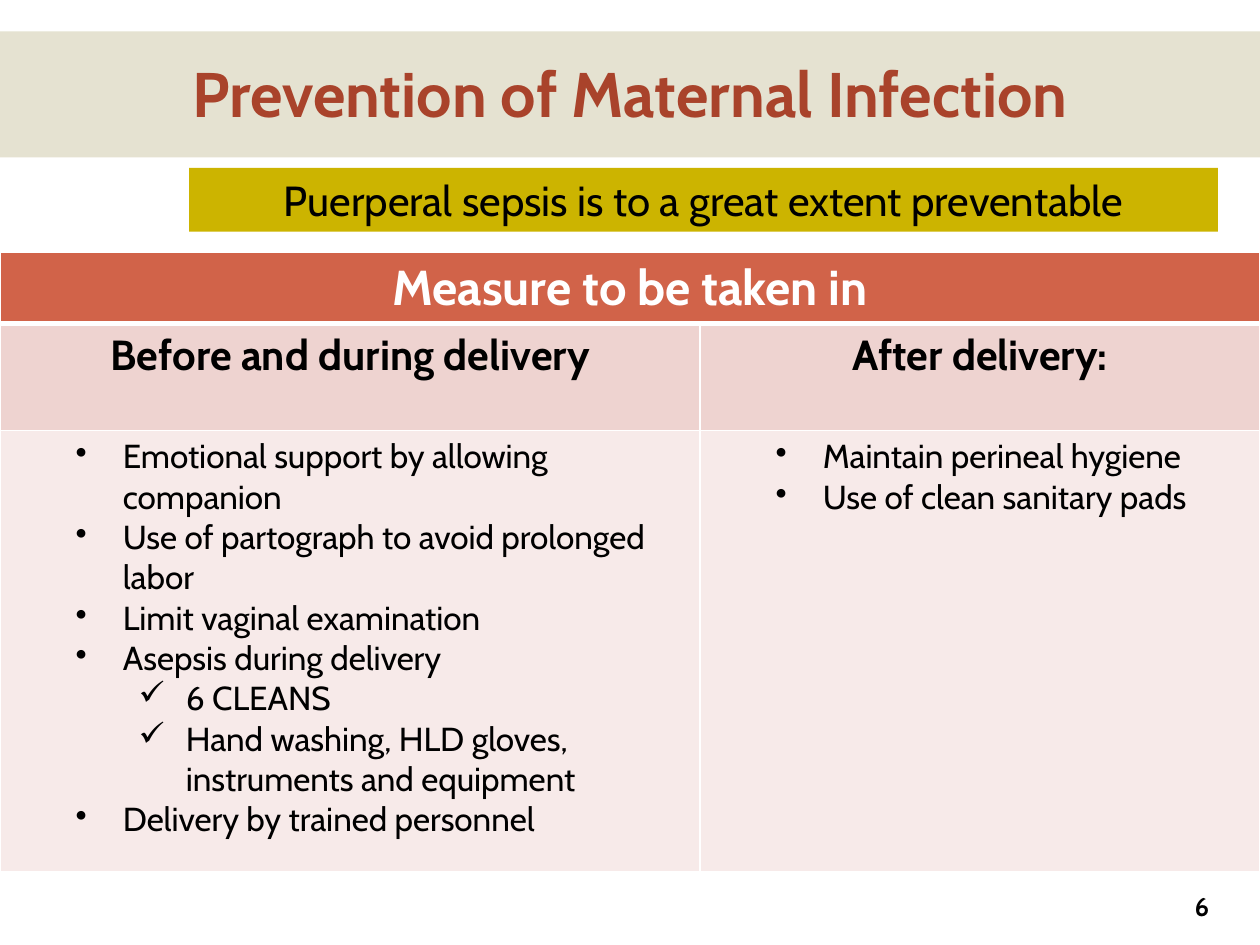
from lxml.etree import SubElement
from pptx import Presentation
from pptx.dml.color import RGBColor
from pptx.enum.shapes import MSO_SHAPE
from pptx.enum.text import MSO_ANCHOR, PP_ALIGN
from pptx.oxml.ns import qn
from pptx.util import Pt

FONT = "Cabin"
BLACK, WHITE = "000000", "FFFFFF"
BULLET, CHECK = "•", "✓"
INDENTS = {BULLET: (1, 63), CHECK: (2, 99)}  # level and left margin
HANGING = 27

BEFORE_DELIVERY = [
    (BULLET, "Emotional support by allowing companion"),
    (BULLET, "Use of partograph to avoid prolonged labor"),
    (BULLET, "Limit vaginal examination"),
    (BULLET, "Asepsis during delivery"),
    (CHECK, "6 CLEANS"),
    (CHECK, "Hand washing, HLD gloves, instruments and equipment"),
    (BULLET, "Delivery by trained personnel"),
]
AFTER_DELIVERY = [
    (BULLET, "Maintain perineal hygiene"),
    (BULLET, "Use of clean sanitary pads"),
]


def color(hex_value):
    return RGBColor.from_string(hex_value)


def write(paragraph, text, size, hex_value=BLACK, bold=False, align=PP_ALIGN.CENTER):
    paragraph.text = text
    paragraph.alignment = align
    font = paragraph.runs[0].font
    font.name, font.size, font.bold = FONT, Pt(size), bold
    font.color.rgb = color(hex_value)


def add_box(slide, left, top, width, height, hex_value):
    box = slide.shapes.add_shape(
        MSO_SHAPE.RECTANGLE, Pt(left), Pt(top), Pt(width), Pt(height))
    box.shadow.inherit = False
    box.fill.solid()
    box.fill.fore_color.rgb = color(hex_value)
    box.line.fill.background()
    return box


def add_text(slide, left, top, width, height, anchor, text, size, hex_value, align):
    frame = slide.shapes.add_textbox(
        Pt(left), Pt(top), Pt(width), Pt(height)).text_frame
    frame.word_wrap = True
    frame.vertical_anchor = anchor
    write(frame.paragraphs[0], text, size, hex_value, True, align)


def set_opacity(shape, percent):
    fill_color = shape._element.spPr.find(qn("a:solidFill"))[0]
    SubElement(fill_color, qn("a:alpha"), val=str(percent * 1000))


def style_cell(cell, hex_value, bottom_width=1):
    properties = cell._tc.get_or_add_tcPr()
    for side, width in (("L", 1), ("R", 1), ("T", 1), ("B", bottom_width)):
        border = SubElement(properties, qn(f"a:ln{side}"), w=str(Pt(width)))
        SubElement(SubElement(border, qn("a:solidFill")), qn("a:srgbClr"), val=WHITE)
    cell.fill.solid()
    cell.fill.fore_color.rgb = color(hex_value)


def write_list(cell, items):
    frame = cell.text_frame
    for index, (mark, text) in enumerate(items):
        paragraph = frame.add_paragraph() if index else frame.paragraphs[0]
        level, margin = INDENTS[mark]
        paragraph.level = level
        properties = paragraph._p.get_or_add_pPr()
        properties.set("marL", str(Pt(margin)))
        properties.set("indent", str(-Pt(HANGING)))
        SubElement(properties, qn("a:buChar"), char=mark)
        write(paragraph, text, 19, align=PP_ALIGN.LEFT)


def add_measures(slide):
    measures_frame = slide.shapes.add_table(3, 2, 0, Pt(144), Pt(720), Pt(362))
    measures = measures_frame.table
    for column, width in zip(measures.columns, (400, 320)):
        column.width = Pt(width)
    for row, height in zip(measures.rows, (34.5, 61.2, 252)):
        row.height = Pt(height)
    measures_frame.height = Pt(362)

    # Heading across both columns
    heading = measures.cell(0, 0)
    heading.merge(measures.cell(0, 1))
    for column in range(2):
        style_cell(measures.cell(0, column), "D16349", 3)
    write(heading.text_frame.paragraphs[0], "Measure to be taken in", 28, WHITE, True)

    # One column for each stage
    stages = [("Before and during delivery", BEFORE_DELIVERY),
              ("After delivery:", AFTER_DELIVERY)]
    for column, (stage, items) in enumerate(stages):
        stage_cell, items_cell = measures.cell(1, column), measures.cell(2, column)
        style_cell(stage_cell, "EED3D0")
        write(stage_cell.text_frame.paragraphs[0], stage, 24, bold=True)
        style_cell(items_cell, "F7EAE9")
        write_list(items_cell, items)


def main():
    presentation = Presentation()
    presentation.slide_width, presentation.slide_height = Pt(720), Pt(540)
    slide = presentation.slides.add_slide(presentation.slide_layouts[6])

    # Title band, page number and title
    band = add_box(slide, 0, 18, 720, 72, "DDD9C3")
    set_opacity(band, 76)
    add_text(slide, 629, 506, 69, 23, MSO_ANCHOR.MIDDLE,
             "6", 14.8, BLACK, PP_ALIGN.RIGHT)
    add_text(slide, 21.6, 18, 676.8, 60, MSO_ANCHOR.BOTTOM,
             "Prevention of Maternal Infection", 36, "A9432B", PP_ALIGN.CENTER)

    # Table of measures
    add_measures(slide)

    # Key message
    message = add_box(slide, 108, 96, 588, 36.35, "CCB400")
    message.text_frame.word_wrap = True
    write(message.text_frame.paragraphs[0],
          "Puerperal sepsis is to a great extent preventable", 24)

    presentation.save("out.pptx")


if __name__ == "__main__":
    main()
